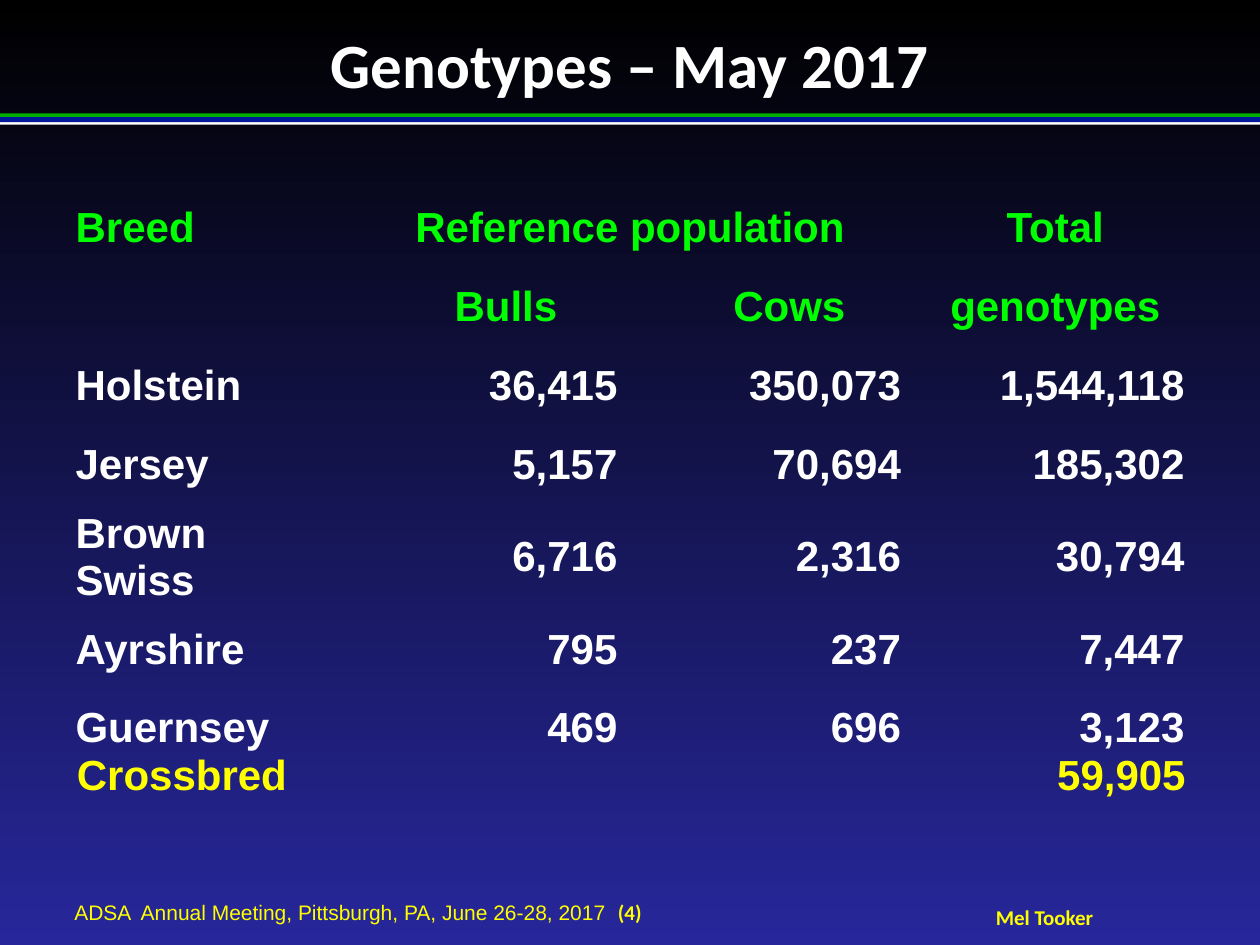
from pptx import Presentation
from pptx.dml.color import RGBColor
from pptx.enum.shapes import MSO_SHAPE as Shape
from pptx.enum.text import MSO_ANCHOR as Anchor, PP_ALIGN as Align
from pptx.oxml.ns import qn
from pptx.util import Inches, Pt

COLORS = {
    "black": "000000", "indigo": "27279B", "white": "FFFFFF", "yellow": "FFFF00",
    "lime": "00FF00", "green": "01AF00", "blue": "001799",
}
NO_STYLE = "{2D5ABB26-0587-4C30-8999-92F81FD0307C}"
BARS = [(0.9, 0.03, "green"), (0.96, 0.03, "white"), (0.93, 0.04, "blue")]
HEADINGS = [
    ["Breed", "Reference population", "", "Total"],
    ["", "Bulls", "Cows", "genotypes"],
]
BREEDS = [
    ["Holstein", "36,415", "350,073", "1,544,118"],
    ["Jersey", "5,157", "70,694", "185,302"],
    ["Brown Swiss", "6,716", "2,316", "30,794"],
    ["Ayrshire", "795", "237", "7,447"],
    ["Guernsey", "469", "696", "3,123"],
]
CROSSBRED = ["Crossbred", "", "", "59,905"]
ROWS, COLUMNS = 8, 4


def color(name):
    """Return the named colour."""
    return RGBColor.from_string(COLORS[name])


def style_font(font, size, name, tint, bold=True):
    """Set the look of a paragraph or run font."""
    font.size, font.name, font.bold = Pt(size), name, bold
    font.color.rgb = color(tint)


def paint_background(page):
    """Fill the page with a vertical gradient."""
    fill = page.background.fill
    fill.gradient()
    fill.gradient_angle = 270
    for stop, position, name in zip(fill.gradient_stops, (0, 1), ("black", "indigo")):
        stop.position = position
        stop.color.rgb = color(name)


def add_bar(page, top, height, tint):
    """Add a full-width coloured rule."""
    bar = page.shapes.add_shape(Shape.RECTANGLE, 0, Inches(top), Inches(10), Inches(height))
    bar.shadow.inherit = False
    bar.fill.solid()
    bar.fill.fore_color.rgb = color(tint)
    bar.line.fill.background()


def clear_margins(frame):
    """Remove the insets of a text frame."""
    frame.margin_left = frame.margin_right = frame.margin_top = frame.margin_bottom = 0


def set_title(page, text):
    """Place and format the title placeholder."""
    title = page.shapes.title
    title.left, title.top = Inches(0.5), Inches(0.2)
    title.width, title.height = Inches(9), Inches(0.6)
    frame = title.text_frame
    clear_margins(frame)
    frame.vertical_anchor = Anchor.TOP
    frame.text = text
    para = frame.paragraphs[0]
    para.alignment = Align.CENTER
    style_font(para.font, 36, "Calibri", "white")


def add_footer(page, left, top, width, spans, align=Align.LEFT, wrap=True):
    """Add a line of footer text made of (text, font, bold) spans."""
    box = page.shapes.add_textbox(Inches(left), Inches(top), Inches(width), Inches(0.2))
    frame = box.text_frame
    clear_margins(frame)
    frame.word_wrap = wrap
    frame.vertical_anchor = Anchor.MIDDLE
    para = frame.paragraphs[0]
    para.alignment = align
    for text, name, bold in spans:
        span = para.add_run()
        span.text = text
        style_font(span.font, 12, name, "yellow", bold)


def add_grid(page, left, top):
    """Add a plain table with its heading cells merged."""
    frame = page.shapes.add_table(
        ROWS, COLUMNS, Inches(left), Inches(top), Inches(9), Inches(5))
    table = frame.table
    table.first_row = table.horz_banding = False
    table._tbl.tblPr.find(qn("a:tableStyleId")).text = NO_STYLE
    for cell in table.iter_cells():
        cell.fill.background()
        cell.vertical_anchor = Anchor.MIDDLE
    table.cell(0, 1).merge(table.cell(0, 2))
    return table


def fill_row(table, row, texts, tint, align):
    """Write one row, with the first column left aligned."""
    for column, text in enumerate(texts):
        if text:
            cell = table.cell(row, column)
            cell.text = text
            para = cell.text_frame.paragraphs[0]
            para.alignment = align if column else Align.LEFT
            style_font(para.font, 24, "Arial", tint)


def main():
    """Build the slide and save it."""
    deck = Presentation()
    deck.slide_width, deck.slide_height = Inches(10), Inches(7.5)
    page = deck.slides.add_slide(deck.slide_layouts[5])
    paint_background(page)
    for bar in BARS:
        add_bar(page, *bar)
    set_title(page, "Genotypes – May 2017")

    breeds = add_grid(page, 0.5, 1.5)
    for row, texts in enumerate(HEADINGS):
        fill_row(breeds, row, texts, "lime", Align.CENTER)
    for column in (1, 2):
        breeds.cell(1, column).margin_left = Inches(0.38)
    for row, texts in enumerate(BREEDS, len(HEADINGS)):
        fill_row(breeds, row, texts, "white", Align.RIGHT)
    crossbred = add_grid(page, 0.51, 1.47)
    fill_row(crossbred, ROWS - 1, CROSSBRED, "yellow", Align.RIGHT)

    meeting = "ADSA  Annual Meeting, Pittsburgh, PA, June 26-28, 2017  "
    add_footer(page, 0.59, 7.14, 6.8, [(meeting, "Arial", False), ("(4)", "Calibri", True)])
    add_footer(page, 7.85, 7.18, 0.88, [("Mel Tooker", "Calibri", True)], Align.CENTER, False)
    deck.save("out.pptx")


if __name__ == "__main__":
    main()
